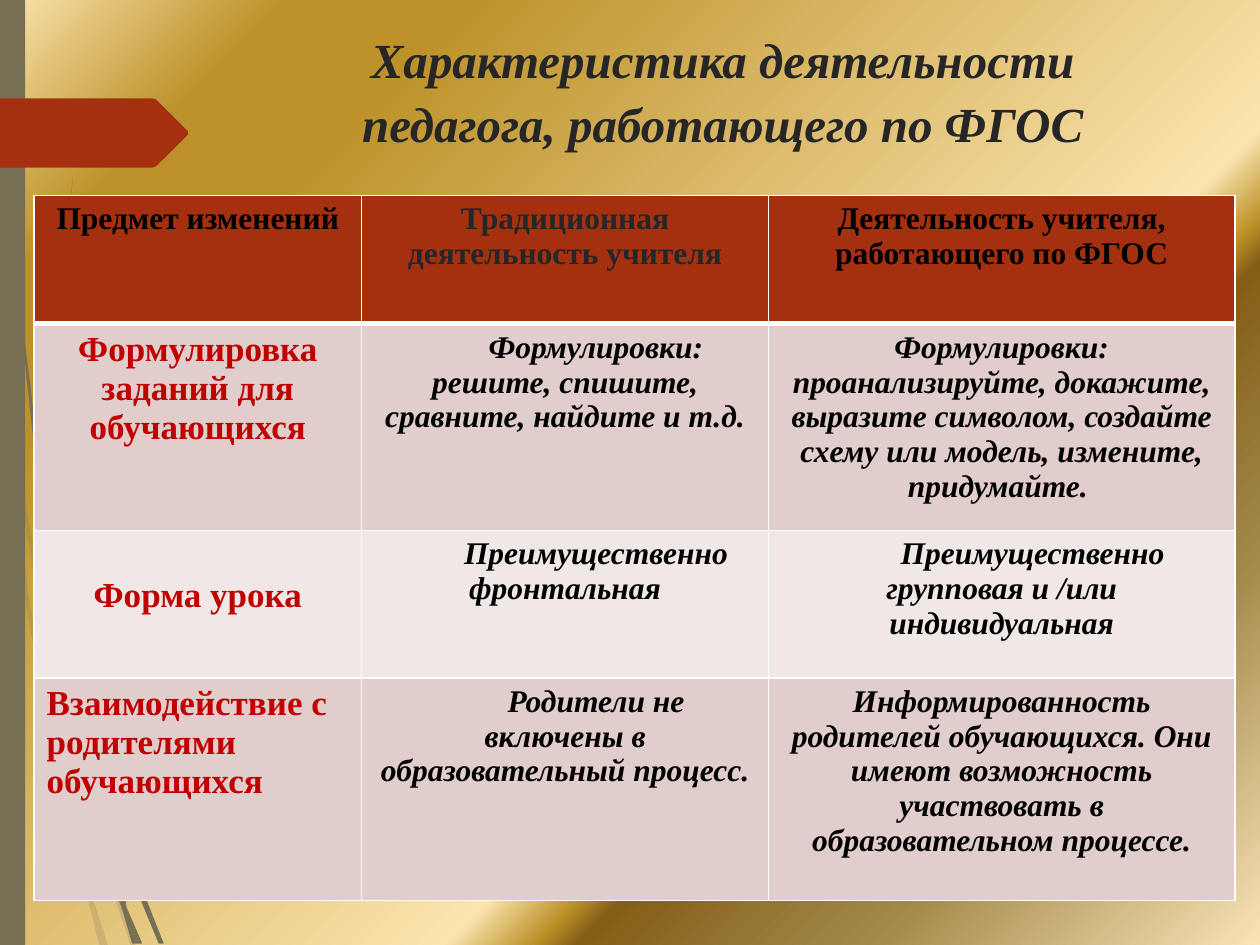
import pptx
import pptx.dml.color
import pptx.enum.shapes
import pptx.enum.text
import pptx.oxml
import pptx.oxml.ns
import pptx.util

SCALE = 9144
FONT = "Times New Roman"
CENTER = pptx.enum.text.PP_ALIGN.CENTER
LEFT = pptx.enum.text.PP_ALIGN.LEFT
OLIVE, RUST, WHITE = "766F54", "A53010", "FFFFFF"
BLACK, RED, CHARCOAL = "000000", "C00000", "262626"
ROSE, PALE = "E1CDCC", "F0E8E7"
NAMESPACE = pptx.oxml.ns.nsdecls("a")

GOLD_STOPS = [(0, "FBE4AE"), (13, "BD922A"), (21, "BD922A"), (63, "FBE4AE"),
              (67, "BD922A"), (69, "835E17"), (82, "A28949"), (100, "FAE3B7")]

FAINT_WISPS = [
    [(8, 350), (6, 322), (0, 282), (0, 299), (7, 344)],
    [(40, 522), (59, 599), (59, 586), (43, 520), (10, 345), (12, 376)],
    [(64, 607), (61, 596), (61, 610), (85, 694), (104, 751), (108, 751), (88, 692)],
    [(83, 751), (86, 751), (73, 711)],
    [(64, 683), (48, 619), (22, 469), (12, 376), (8, 350), (19, 470), (45, 621),
     (64, 693), (70, 714), (69, 707)],
    [(58, 599), (60, 646), (64, 683), (67, 692), (73, 711), (72, 706), (63, 646),
     (61, 610), (61, 608)],
    [(61, 584), (76, 462), (111, 349), (159, 245), (187, 198), (201, 175), (217, 154),
     (217, 153), (201, 175), (186, 197), (158, 244), (110, 348), (75, 461), (59, 584),
     (59, 586), (61, 596)],
    [(70, 714), (79, 751), (82, 751)],
    [(61, 608), (61, 610), (61, 596), (59, 586), (58, 599)],
    [(67, 692), (65, 683), (69, 707), (70, 714), (82, 751), (83, 751), (73, 711)],
]
SOLID_WISPS = [
    [(5, 110), (14, 233), (27, 355), (46, 477), (47, 481), (45, 457), (45, 453),
     (30, 355), (15, 232), (6, 109), (4, 48), (3, 0), (2, 0), (3, 48)],
    [(73, 592), (88, 645), (88, 633), (88, 631), (77, 590), (50, 472), (53, 505)],
    [(94, 649), (91, 641), (91, 656), (109, 708), (126, 749), (130, 749), (113, 706)],
    [(91, 691), (81, 657), (60, 556), (53, 505), (47, 477), (56, 557), (77, 659),
     (92, 708), (97, 722), (96, 717)],
    [(50, 472), (48, 453), (44, 349), (48, 245), (52, 193), (58, 141), (51, 193),
     (47, 245), (43, 349), (45, 449), (49, 472)],
    [(110, 749), (113, 749), (100, 719)],
    [(47, 477), (53, 505), (50, 472), (49, 472), (45, 449), (45, 453)],
    [(91, 633), (103, 552), (131, 476), (169, 406), (191, 374), (203, 359), (216, 344),
     (215, 344), (203, 358), (191, 373), (168, 405), (129, 474), (101, 551), (88, 631),
     (91, 641)],
    [(97, 722), (105, 749), (108, 749)],
    [(88, 645), (91, 691), (96, 706), (100, 719), (100, 716), (91, 656), (90, 651)],
    [(88, 645), (90, 651), (91, 656), (91, 641), (88, 631), (88, 633)],
    [(96, 706), (91, 691), (96, 717), (97, 722), (108, 749), (110, 749), (100, 719)],
]
ARROW = [(0, 0), (121, 0), (124, 1), (149, 26), (149, 29), (124, 54), (121, 55), (0, 55)]

COLUMNS = [260, 323, 370]
ROWS = [102, 164, 117, 177]
HEADINGS = [("Предмет изменений", BLACK),
            ("Традиционная деятельность учителя", CHARCOAL),
            ("Деятельность учителя, работающего по ФГОС", BLACK)]
SUBJECTS = [("Формулировка заданий для обучающихся", CENTER, 5),
            ("Форма урока", CENTER, 36),
            ("Взаимодействие с родителями обучающихся", LEFT, 5)]
ACTIVITIES = [
    [("Формулировки: решите, спишите, сравните, найдите и т.д.", 49),
     ("Формулировки: проанализируйте, докажите, выразите символом, создайте схему "
      "или модель, измените, придумайте. ", 0)],
    [("Преимущественно фронтальная", 49),
     ("Преимущественно групповая и /или индивидуальная", 49)],
    [("Родители не включены в образовательный процесс.", 49),
     ("Информированность родителей обучающихся. Они имеют возможность участвовать "
      "в образовательном процессе.", 0)],
]


def px(length):
    return pptx.util.Emu(length * SCALE)


def color(value):
    return pptx.dml.color.RGBColor.from_string(value)


def paint(shape, value, opacity=100):
    shape.shadow.inherit = False
    shape.line.fill.background()
    shape.fill.solid()
    shape.fill.fore_color.rgb = color(value)
    if opacity < 100:
        tint = shape.fill._xPr.find(".//" + pptx.oxml.ns.qn("a:srgbClr"))
        tint.append(pptx.oxml.parse_xml(f'<a:alpha {NAMESPACE} val="{opacity * 1000}"/>'))


def set_text(frame, text, size, value, align=CENTER, italic=False, indent=0):
    para = frame.paragraphs[0]
    para.text = text
    para.alignment = align
    font = para.font
    font.name, font.size = FONT, pptx.util.Pt(size)
    font.bold, font.italic = True, italic
    font.color.rgb = color(value)
    if indent:
        properties = para._p.get_or_add_pPr()
        properties.set("marL", "0")
        properties.set("indent", str(px(indent)))
    return para


def add_background(page):
    fill = page.background.fill
    fill.gradient()
    gradient = fill._xPr.find(pptx.oxml.ns.qn("a:gradFill"))
    stops = gradient.find(pptx.oxml.ns.qn("a:gsLst"))
    for stop in list(stops):
        stops.remove(stop)
    for position, value in GOLD_STOPS:
        stops.append(pptx.oxml.parse_xml(
            f'<a:gs {NAMESPACE} pos="{position * 1000}"><a:srgbClr val="{value}"/></a:gs>'))
    gradient.find(pptx.oxml.ns.qn("a:lin")).set("ang", str(45 * 60000))


def add_outline(page, box, points, value, opacity=100):
    left, top = box[:2]
    builder = page.shapes.build_freeform(*points[0], scale=SCALE)
    builder.add_line_segments(points[1:], close=True)
    paint(builder.convert_to_shape(px(left), px(top)), value, opacity)


def add_decoration(page, box):
    left, top, width, height = box
    for points in FAINT_WISPS:
        add_outline(page, box, points, OLIVE, 20)
    for points in SOLID_WISPS:
        add_outline(page, box, points, OLIVE)
    band = page.shapes.add_shape(pptx.enum.shapes.MSO_SHAPE.RECTANGLE,
                                 px(left), px(top), px(20), px(height))
    paint(band, OLIVE)
    add_outline(page, (left, top + 78), ARROW, RUST)


def add_title(page, box):
    frame = page.shapes.add_textbox(*map(px, box)).text_frame
    frame.word_wrap = True
    para = set_text(frame, "Характеристика деятельности педагога, работающего по ФГОС",
                    28, CHARCOAL, italic=True)
    para.line_spacing = 1.09


def style_cell(cell, value, top_width=1, bottom_width=1):
    properties = cell._tc.get_or_add_tcPr()
    for side, width in (("L", 1), ("R", 1), ("T", top_width), ("B", bottom_width)):
        properties.append(pptx.oxml.parse_xml(
            f'<a:ln{side} {NAMESPACE} w="{width * 12700}"><a:solidFill>'
            f'<a:srgbClr val="{WHITE}"/></a:solidFill></a:ln{side}>'))
    cell.fill.solid()
    cell.fill.fore_color.rgb = color(value)


def add_comparison(page, box):
    table = page.shapes.add_table(len(ROWS), len(COLUMNS), *map(px, box)).table
    for column, width in zip(table.columns, COLUMNS):
        column.width = px(width)
    for row, height in zip(table.rows, ROWS):
        row.height = px(height)
    for index, (heading, value) in enumerate(HEADINGS):
        cell = table.cell(0, index)
        style_cell(cell, RUST, bottom_width=3)
        set_text(cell.text_frame, heading, 18, value)
    for number, (subject, activities) in enumerate(zip(SUBJECTS, ACTIVITIES), 1):
        for cell in table.rows[number].cells:
            style_cell(cell, ROSE if number % 2 else PALE, top_width=3 if number == 1 else 1)
        text, align, margin = subject
        cell = table.cell(number, 0)
        cell.margin_top = px(margin)
        set_text(cell.text_frame, text, 20, RED, align)
        for index, (text, indent) in enumerate(activities, 1):
            set_text(table.cell(number, index).text_frame, text, 18, BLACK,
                     italic=True, indent=indent)


def main():
    deck = pptx.Presentation()
    deck.slide_width, deck.slide_height = px(1000), px(750)
    page = deck.slides.add_slide(deck.slide_layouts[6])
    add_background(page)
    add_decoration(page, (0, 0, 1000, 750))
    add_title(page, (213, 14, 721, 140))
    add_comparison(page, (27, 155, sum(COLUMNS), sum(ROWS)))
    deck.save("out.pptx")


if __name__ == "__main__":
    main()
